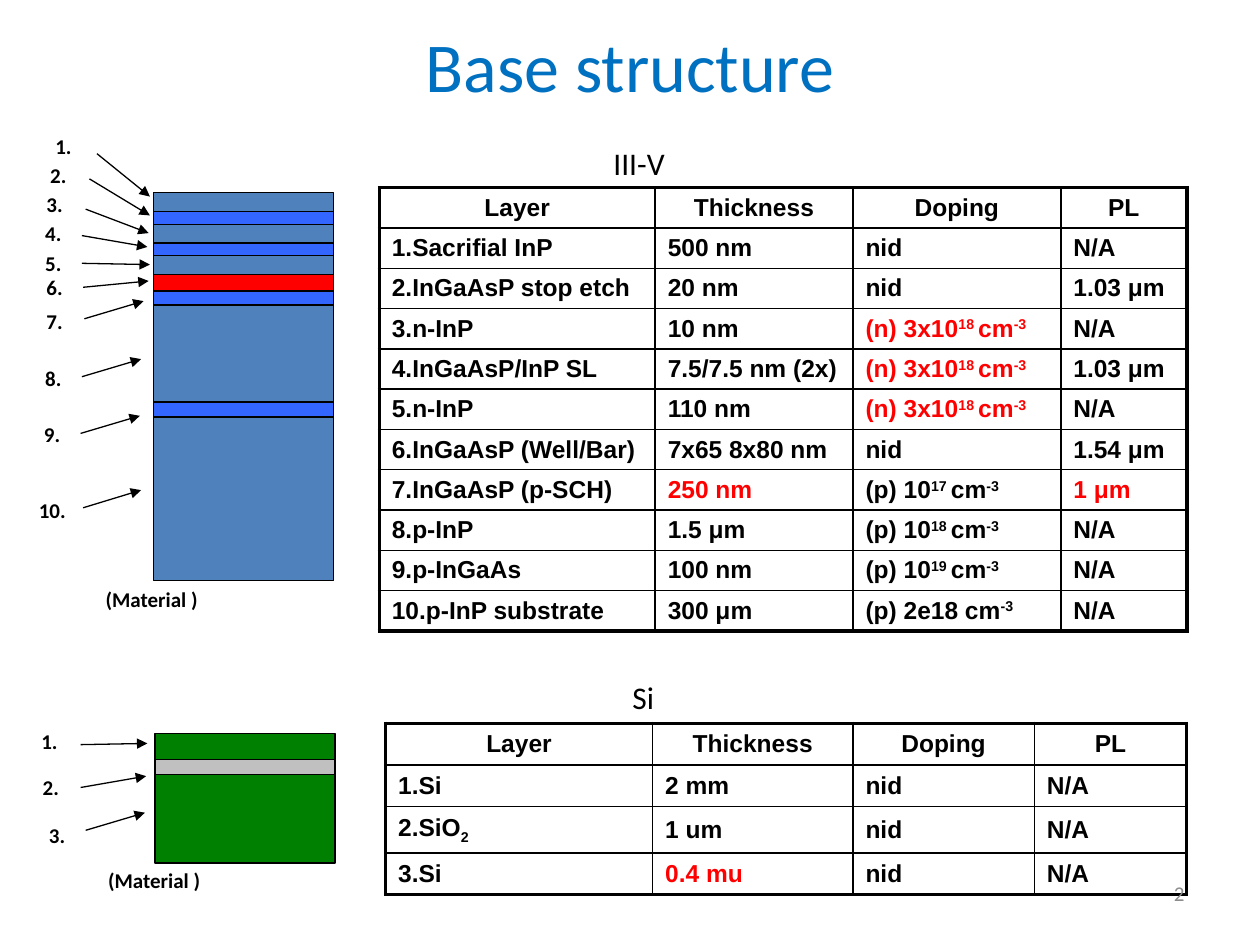
from itertools import pairwise
from lxml.etree import SubElement as Sub
from pptx import Presentation
from pptx.dml.color import RGBColor as RGB
from pptx.enum.shapes import MSO_CONNECTOR as LINK, MSO_SHAPE as SHAPE
from pptx.enum.text import MSO_ANCHOR as ANCHOR, PP_ALIGN as ALIGN
from pptx.oxml.ns import qn
from pptx.util import Pt

PX = 9144
BLACK = RGB(0, 0, 0)
STEEL = RGB(0x4F, 0x81, 0xBD)
BLUE = RGB(0x33, 0x66, 0xFF)
RED = RGB(0xFF, 0, 0)
GREEN = RGB(0, 0x80, 0)
SILVER = RGB(0xC0, 0xC0, 0xC0)
GRAY = RGB(0x8C, 0x8C, 0x8C)
TITLE = RGB(0, 0x70, 0xC0)

deck = Presentation()
deck.slide_width, deck.slide_height = 1000 * PX, 750 * PX
slide = deck.slides.add_slide(deck.slide_layouts[6])
shapes = slide.shapes


def style(para, size, color, bold=False, align=ALIGN.LEFT, face="Calibri"):
    para.alignment = align
    font = para.font
    font.name, font.size, font.bold = face, Pt(size), bold
    font.color.rgb = color


def write(text, box, size, color=BLACK, bold=False, align=ALIGN.LEFT, anchor=ANCHOR.TOP):
    frame = shapes.add_textbox(*[n * PX for n in box]).text_frame
    frame.word_wrap = True
    frame.vertical_anchor = anchor
    para = frame.paragraphs[0]
    para.text = text
    style(para, size, color, bold, align)


write("Base structure", (50, 8, 900, 87), 40, TITLE, align=ALIGN.CENTER, anchor=ANCHOR.MIDDLE)

stacks = [
    (122, [153, 168, 178, 193, 203, 218, 231, 242, 319, 331, 461],
     [STEEL, BLUE, STEEL, BLUE, STEEL, RED, BLUE, STEEL, BLUE, STEEL]),
    (123, [582, 603, 615, 685], [GREEN, SILVER, GREEN]),
]
for left, edges, fills in stacks:
    for (top, low), fill in zip(pairwise(edges), fills):
        layer = shapes.add_shape(SHAPE.RECTANGLE, left * PX, top * PX, 143 * PX, (low - top) * PX)
        layer.shadow.inherit = False
        layer.fill.solid()
        layer.fill.fore_color.rgb = fill
        layer.line.color.rgb = BLACK
        layer.line.width = Pt(0.75)

labels = [
    ("1.", 34, 101, (77, 122, 119, 156)),
    ("2.", 30, 124, (71, 142, 119, 171)),
    ("3.", 27, 147, (68, 166, 118, 185)),
    ("4.", 26, 170, (65, 187, 117, 196)),
    ("5.", 26, 194, (65, 209, 119, 210)),
    ("6.", 27, 213, (66, 228, 118, 223)),
    ("7.", 27, 240, (67, 253, 114, 239)),
    ("8.", 26, 285, (65, 299, 112, 285)),
    ("9.", 25, 330, (64, 344, 111, 330)),
    ("10.", 21, 390, (66, 403, 112, 389)),
    ("1.", 23, 573, (64, 591, 117, 590)),
    ("2.", 24, 610, (64, 625, 116, 616)),
    ("3.", 29, 648, (68, 659, 115, 645)),
]
for text, left, top, ends in labels:
    write(text, (left, top, 62, 30), 12, bold=True)
    arrow = shapes.add_connector(LINK.STRAIGHT, *[n * PX for n in ends])
    arrow.line.color.rgb = BLACK
    arrow.line.width = Pt(0.75)
    Sub(arrow.line._get_or_add_ln(), qn("a:tailEnd"), type="triangle")
    Sub(arrow._element.spPr, qn("a:effectLst"))

for left, top in [(74, 461), (76, 684)]:
    write("(Material )", (left, top, 229, 30), 12, bold=True)
write("III-V", (477, 109, 291, 40), 18)
write("Si", (492, 533, 291, 40), 18)

HEAD = ["Layer", "Thickness", "Doping", "PL"]
N18 = "!(n) 3x10|^18 |cm|^-3"
grids = [
    (301, 149, [219, 157, 165, 100], [32] * 11, [
        HEAD,
        ["1.Sacrifial InP", "500 nm", "nid", "N/A"],
        ["2.InGaAsP stop etch", "20 nm", "nid", "1.03 μm"],
        ["3.n-InP", "10 nm", N18, "N/A"],
        ["4.InGaAsP/InP SL", "7.5/7.5 nm (2x)", N18, "1.03 μm"],
        ["5.n-InP", "110 nm", N18, "N/A"],
        ["6.InGaAsP (Well/Bar)", "7x65 8x80 nm", "nid", "1.54 μm"],
        ["7.InGaAsP (p-SCH)", "!250 nm", "(p) 10|^17 |cm|^-3", "!1 μm"],
        ["8.p-InP", "1.5 μm", "(p) 10|^18 |cm|^-3", "N/A"],
        ["9.p-InGaAs", "100 nm", "(p) 10|^19 |cm|^-3", "N/A"],
        ["10.p-InP substrate", "300 μm", "(p) 2e18 cm|^-3", "N/A"],
    ]),
    (306, 574, [212, 159, 144, 121], [33, 33, 37, 33], [
        HEAD,
        ["1.Si", "2 mm", "nid", "N/A"],
        ["2.SiO|_2", "1 um", "nid", "N/A"],
        ["3.Si", "!0.4 mu", "nid", "N/A"],
    ]),
]
BASE = {"^": "30000", "_": "-25000"}
for left, top, wides, highs, rows in grids:
    table = shapes.add_table(len(rows), len(wides), left * PX, top * PX,
                             sum(wides) * PX, sum(highs) * PX).table
    table.first_row = table.horz_banding = False
    for col, wide in zip(table.columns, wides):
        col.width = wide * PX
    for row, high in zip(table.rows, highs):
        row.height = high * PX
    for r, row in enumerate(rows):
        for c, text in enumerate(row):
            cell = table.cell(r, c)
            cell.margin_top = cell.margin_bottom = 4 * PX
            cell.vertical_anchor = ANCHOR.MIDDLE
            para = cell.text_frame.paragraphs[0]
            style(para, 14, RED if text[0] == "!" else BLACK, True,
                  ALIGN.LEFT if r else ALIGN.CENTER, "Arial")
            for part in text.lstrip("!").split("|"):
                run = para.add_run()
                run.text = part.lstrip("^_")
                if part[0] in BASE:
                    run.font._element.set("baseline", BASE[part[0]])
            outer = {"L": c == 0, "R": c == len(wides) - 1, "T": r == 0, "B": r == len(rows) - 1}
            props = cell._tc.get_or_add_tcPr()
            for side, edge in outer.items():
                line = Sub(props, qn("a:ln" + side), w=str(Pt(2.25 if edge else 1)))
                Sub(Sub(line, qn("a:solidFill")), qn("a:srgbClr"), val=str(BLACK))
            cell.fill.background()

write("2", (717, 683, 233, 52), 12, GRAY, align=ALIGN.RIGHT, anchor=ANCHOR.MIDDLE)

deck.save("out.pptx")
